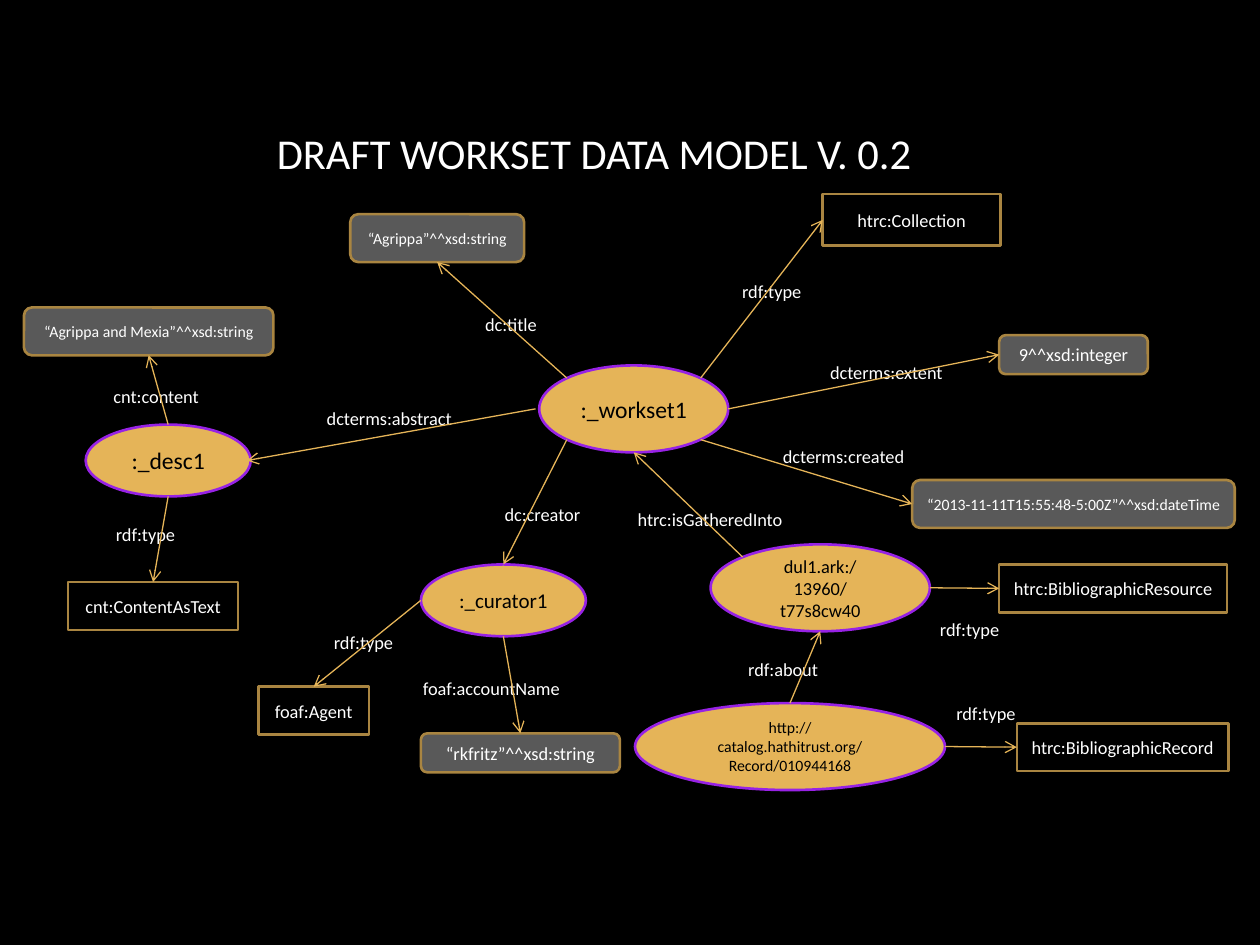
from typing import NamedTuple

from lxml.etree import SubElement
from pptx import Presentation
from pptx.dml.color import RGBColor
from pptx.enum.shapes import MSO_CONNECTOR, MSO_SHAPE
from pptx.enum.text import MSO_ANCHOR, MSO_AUTO_SIZE, PP_ALIGN
from pptx.oxml.ns import qn
from pptx.util import Emu, Pt

SCALE = 9144  # EMU in one px, 100 px to the inch
FONT = "Calibri"
BLACK = RGBColor(0x00, 0x00, 0x00)
WHITE = RGBColor(0xFF, 0xFF, 0xFF)
GOLD = RGBColor(0xE5, 0xB4, 0x58)
BRONZE = RGBColor(0xA9, 0x85, 0x41)
PURPLE = RGBColor(0x97, 0x22, 0xE5)
GRAY = RGBColor(0x59, 0x59, 0x59)


class Style(NamedTuple):
    form: MSO_SHAPE
    fill: RGBColor
    line: RGBColor
    ink: RGBColor


class Box(NamedTuple):
    left: int
    top: int
    width: int
    height: int


class Node(NamedTuple):
    style: Style
    box: Box
    text: str
    size: float = 10.5
    inset: int = 0


class Edge(NamedTuple):
    start: str
    exit: str
    end: str
    entry: str
    label: str
    place: Box
    shift: int = 0


ENTITY = Style(MSO_SHAPE.OVAL, GOLD, PURPLE, BLACK)
KIND = Style(MSO_SHAPE.RECTANGLE, BLACK, BRONZE, WHITE)
VALUE = Style(MSO_SHAPE.ROUNDED_RECTANGLE, GRAY, BRONZE, WHITE)

# Points on an outline as shares of its box; diagonals lie on the ellipse
NEAR, FAR = 0.146, 0.854
SIDES = {
    "n": (0.5, 0), "s": (0.5, 1), "w": (0, 0.5), "e": (1, 0.5),
    "nw": (NEAR, NEAR), "ne": (FAR, NEAR), "sw": (NEAR, FAR), "se": (FAR, FAR),
}

NODES = {
    "workset": Node(ENTITY, Box(428, 290, 150, 69), ":_workset1", 13.5),
    "desc": Node(ENTITY, Box(68, 337, 131, 57), ":_desc1", 13.5),
    "curator": Node(ENTITY, Box(334, 448, 131, 57), ":_curator1", 12),
    "volume": Node(ENTITY, Box(564, 432, 174, 69), "dul1.ark:/13960/t77s8cw40", inset=20),
    "record": Node(ENTITY, Box(504, 558, 246, 69),
                   "http://catalog.hathitrust.org/Record/010944168", 9, 20),
    "set": Node(KIND, Box(653, 154, 141, 41), "htrc:Collection"),
    "content": Node(KIND, Box(54, 462, 135, 38), "cnt:ContentAsText"),
    "agent": Node(KIND, Box(205, 545, 88, 38), "foaf:Agent"),
    "source": Node(KIND, Box(793, 448, 181, 38), "htrc:BibliographicResource"),
    "entry": Node(KIND, Box(807, 574, 168, 38), "htrc:BibliographicRecord"),
    "name": Node(VALUE, Box(334, 582, 158, 31), "“rkfritz”^^xsd:string"),
    "extent": Node(VALUE, Box(793, 266, 118, 31), "9^^xsd:integer"),
    "date": Node(VALUE, Box(724, 381, 256, 38),
                 "“2013-11-11T15:55:48-5:00Z”^^xsd:dateTime", 9),
    "title": Node(VALUE, Box(278, 170, 138, 38), "“Agrippa”^^xsd:string", 9),
    "summary": Node(VALUE, Box(19, 244, 198, 38), "“Agrippa and Mexia”^^xsd:string", 9),
}

EDGES = [
    Edge("workset", "ne", "set", "w", "rdf:type", Box(578, 212, 69, 38)),
    Edge("workset", "nw", "title", "n", "dc:title", Box(365, 238, 81, 38))._replace(entry="s"),
    Edge("workset", "w", "desc", "e", "dcterms:abstract", Box(244, 313, 130, 38), -3),
    Edge("workset", "sw", "curator", "n", "dc:creator", Box(390, 389, 81, 38)),
    Edge("workset", "e", "extent", "w", "dcterms:extent", Box(647, 276, 113, 38)),
    Edge("workset", "se", "date", "w", "dcterms:created", Box(595, 343, 149, 38)),
    Edge("desc", "n", "summary", "s", "cnt:content", Box(71, 295, 106, 38)),
    Edge("desc", "s", "content", "n", "rdf:type", Box(81, 405, 69, 38)),
    Edge("curator", "w", "agent", "n", "rdf:type", Box(254, 491, 69, 38)),
    Edge("curator", "s", "name", "n", "foaf:accountName", Box(318, 527, 144, 38)),
    Edge("volume", "nw", "workset", "s", "htrc:isGatheredInto", Box(494, 393, 139, 38)),
    Edge("volume", "e", "source", "w", "rdf:type", Box(735, 480, 69, 38)),
    Edge("record", "n", "volume", "s", "rdf:about", Box(574, 512, 95, 38)),
    Edge("record", "e", "entry", "w", "rdf:type", Box(748, 547, 69, 38)),
]


def px(size: float) -> Emu:
    return Emu(round(size * SCALE))


def place(box: Box) -> list[Emu]:
    return [px(size) for size in box]


def write(shape, text: str, size: float, ink: RGBColor, inset: int = 0) -> None:
    frame = shape.text_frame
    frame.text = text
    frame.word_wrap = True
    frame.auto_size = MSO_AUTO_SIZE.NONE
    frame.vertical_anchor = MSO_ANCHOR.MIDDLE
    frame.margin_left = frame.margin_right = px(inset)
    frame.margin_top = frame.margin_bottom = 0
    line = frame.paragraphs[0]
    line.alignment = PP_ALIGN.CENTER
    font = line.runs[0].font
    font.name, font.size = FONT, Pt(size)
    font.color.rgb = ink


def add_node(slide, node: Node) -> None:
    shape = slide.shapes.add_shape(node.style.form, *place(node.box))
    shape.shadow.inherit = False
    shape.fill.solid()
    shape.fill.fore_color.rgb = node.style.fill
    shape.line.color.rgb = node.style.line
    shape.line.width = Pt(1.5)
    write(shape, node.text, node.size, node.style.ink, node.inset)


def point(name: str, side: str, shift: int) -> tuple[Emu, Emu]:
    box = NODES[name].box
    across, down = SIDES[side]
    return px(box.left + across * box.width + shift), px(box.top + down * box.height)


def add_arrow(slide, edge: Edge) -> None:
    start = point(edge.start, edge.exit, edge.shift)
    end = point(edge.end, edge.entry, edge.shift)
    arrow = slide.shapes.add_connector(MSO_CONNECTOR.STRAIGHT, *start, *end)
    arrow.line.color.rgb = GOLD
    arrow.line.width = Pt(0.75)
    SubElement(arrow.line._get_or_add_ln(), qn("a:tailEnd"), type="arrow")
    SubElement(arrow._element.spPr, qn("a:effectLst"))


def main() -> None:
    deck = Presentation()
    deck.slide_width, deck.slide_height = px(1000), px(750)
    slide = deck.slides.add_slide(deck.slide_layouts[5])
    slide.background.fill.solid()
    slide.background.fill.fore_color.rgb = BLACK

    # Title
    title = slide.shapes.title
    title.left, title.top, title.width, title.height = place(Box(56, 94, 831, 54))
    write(title, "DRAFT WORKSET DATA MODEL V. 0.2", 24.3, WHITE)

    # Labels lie under the nodes and arrows
    for edge in EDGES:
        label = slide.shapes.add_textbox(*place(edge.place))
        write(label, edge.label, 10.5, WHITE)
    for node in NODES.values():
        add_node(slide, node)
    for edge in EDGES:
        add_arrow(slide, edge)

    deck.save("out.pptx")


if __name__ == "__main__":
    main()
